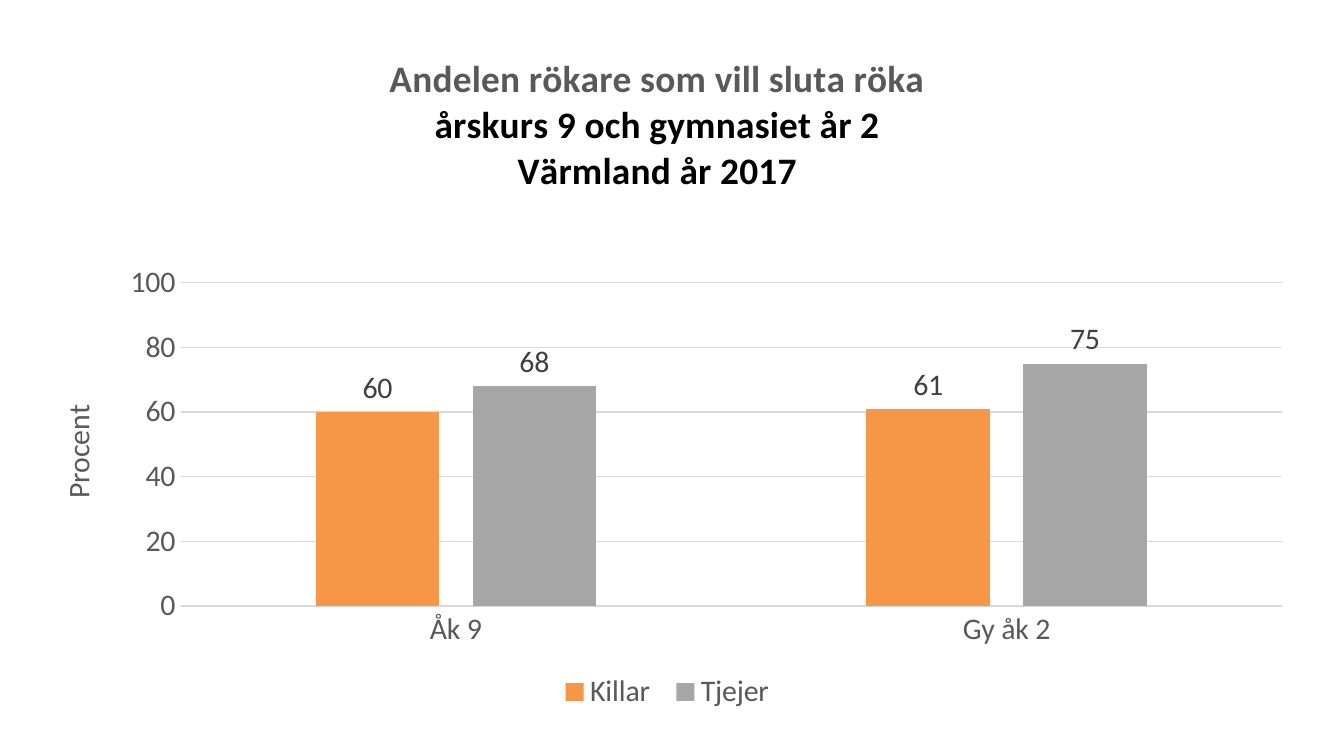
from lxml.etree import SubElement
from pptx import Presentation
from pptx.chart.data import CategoryChartData as Data
from pptx.dml.color import RGBColor
from pptx.enum.chart import XL_CHART_TYPE as Kind
from pptx.enum.chart import XL_LABEL_POSITION as Spot
from pptx.enum.chart import XL_LEGEND_POSITION as Side
from pptx.enum.chart import XL_TICK_MARK as Tick
from pptx.oxml.ns import qn
from pptx.util import Inches, Pt

ORANGE = RGBColor(0xF7, 0x96, 0x46)
SILVER = RGBColor(0xA6, 0xA6, 0xA6)
PALE = RGBColor(0xD9, 0xD9, 0xD9)
GREY = RGBColor(0x59, 0x59, 0x59)
DARK = RGBColor(0x40, 0x40, 0x40)
BLACK = RGBColor(0, 0, 0)

TITLE = [
    ("Andelen rökare som vill sluta röka", GREY),
    ("årskurs 9 och gymnasiet år 2", BLACK),
    ("Värmland år 2017", BLACK),
]
UNIT = "Procent"
GROUPS = ["Åk 9", "Gy åk 2"]
SERIES = [("Killar ", [60, 61], ORANGE), ("Tjejer", [68, 75], SILVER)]


def style(font, color, size=16, bold=False):
    font.name = "Calibri"
    font.size = Pt(size)
    font.bold = bold
    font.color.rgb = color


def rule(line):
    line.color.rgb = PALE
    line.width = Pt(0.75)


def place(part, index, **share):
    for old in part.findall(qn("c:layout")):
        part.remove(old)
    layout = SubElement(part, qn("c:layout"))
    part.insert(index, layout)
    manual = SubElement(layout, qn("c:manualLayout"))
    if "w" in share:
        SubElement(manual, qn("c:layoutTarget")).set("val", "inner")
    for key in ("x", "y"):
        SubElement(manual, qn(f"c:{key}Mode")).set("val", "edge")
    for key, val in share.items():
        SubElement(manual, qn(f"c:{key}")).set("val", str(val))


def write(title, lines, size, bold):
    frame = title.text_frame
    for i, (text, color) in enumerate(lines):
        para = frame.add_paragraph() if i else frame.paragraphs[0]
        para.text = text
        style(para.font, color, size, bold)
        style(para.runs[0].font, color, size, bold)
    return frame


deck = Presentation()
deck.slide_width = Inches(10)
deck.slide_height = deck.slide_width * 9 // 16
slide = deck.slides.add_slide(deck.slide_layouts[6])

data = Data()
data.categories = GROUPS
for name, vals, _ in SERIES:
    data.add_series(name, vals)
box = [Inches(n) for n in (0.2, 0.21, 9.53, 5.12)]
chart = slide.shapes.add_chart(Kind.COLUMN_CLUSTERED, *box, data).chart
style(chart.font, BLACK)

write(chart.chart_title, TITLE, 20, True)
chart.chart_title.include_in_layout = False
place(chart.chart_title._element, 1, x=0.28, y=0.03)
place(chart._chartSpace.chart.plotArea, 0, x=0.12, y=0.37, w=0.86, h=0.47)

plot = chart.plots[0]
plot.gap_width, plot.overlap = 219, -27
plot.vary_by_categories = False
for bar, (_, _, color) in zip(plot.series, SERIES):
    bar.format.fill.solid()
    bar.format.fill.fore_color.rgb = color
    labels = bar.data_labels
    labels.show_value = True
    labels.position = Spot.OUTSIDE_END
    style(labels.font, DARK)

cat, val = chart.category_axis, chart.value_axis
for axis in (cat, val):
    axis.major_tick_mark = axis.minor_tick_mark = Tick.NONE
    style(axis.tick_labels.font, GREY)
rule(cat.format.line)
val.format.line.fill.background()
val.minimum_scale, val.maximum_scale, val.major_unit = 0, 100, 20
rule(val.major_gridlines.format.line)
frame = write(val.axis_title, [(UNIT, GREY)], 16, False)
turn = frame._txBody.bodyPr
turn.set("rot", "-5400000")
turn.set("vert", "horz")
place(val.axis_title._element, 1, x=0.02, y=0.54)

chart.has_legend = True
chart.legend.position = Side.BOTTOM
chart.legend.include_in_layout = False
style(chart.legend.font, GREY)

deck.save("out.pptx")
